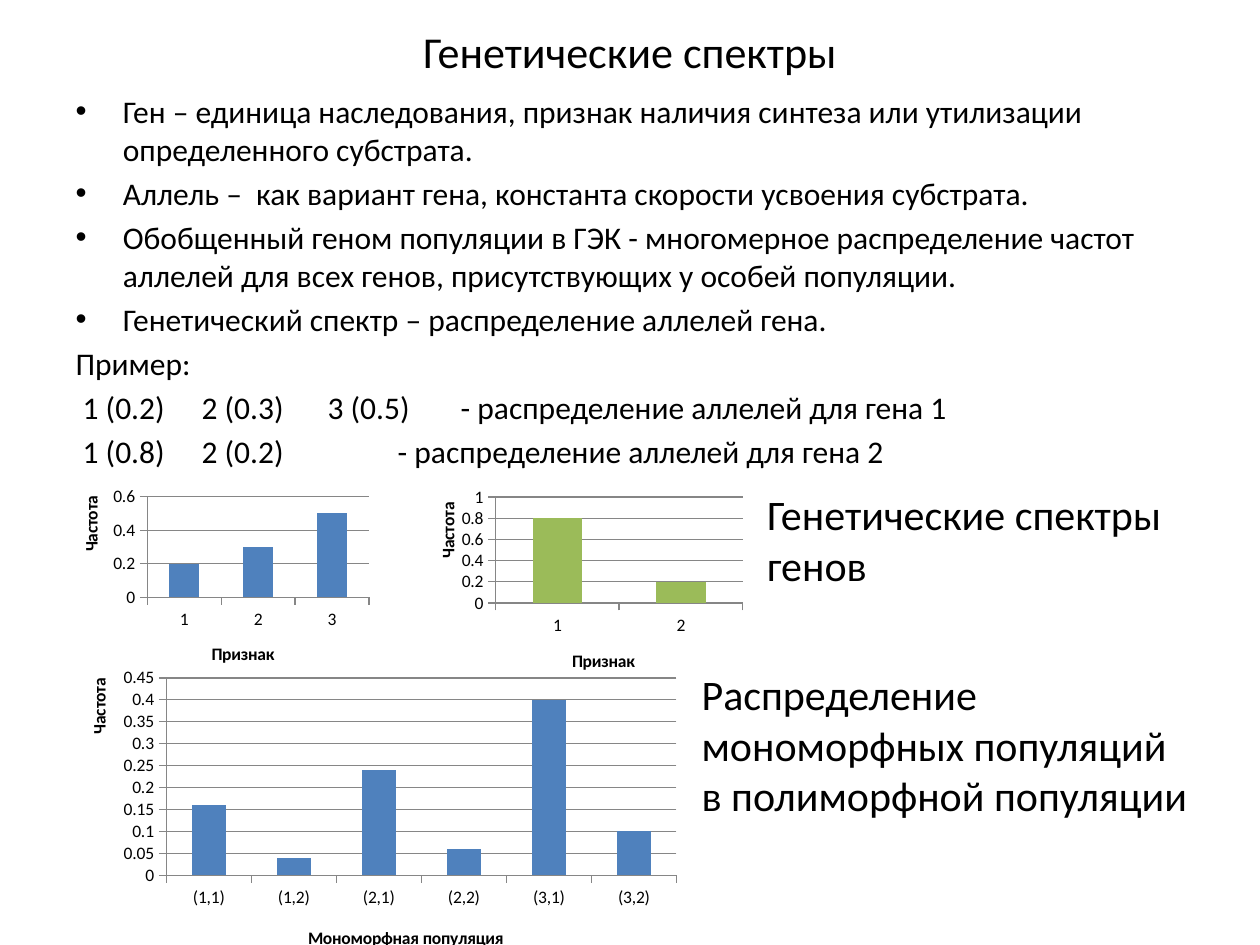
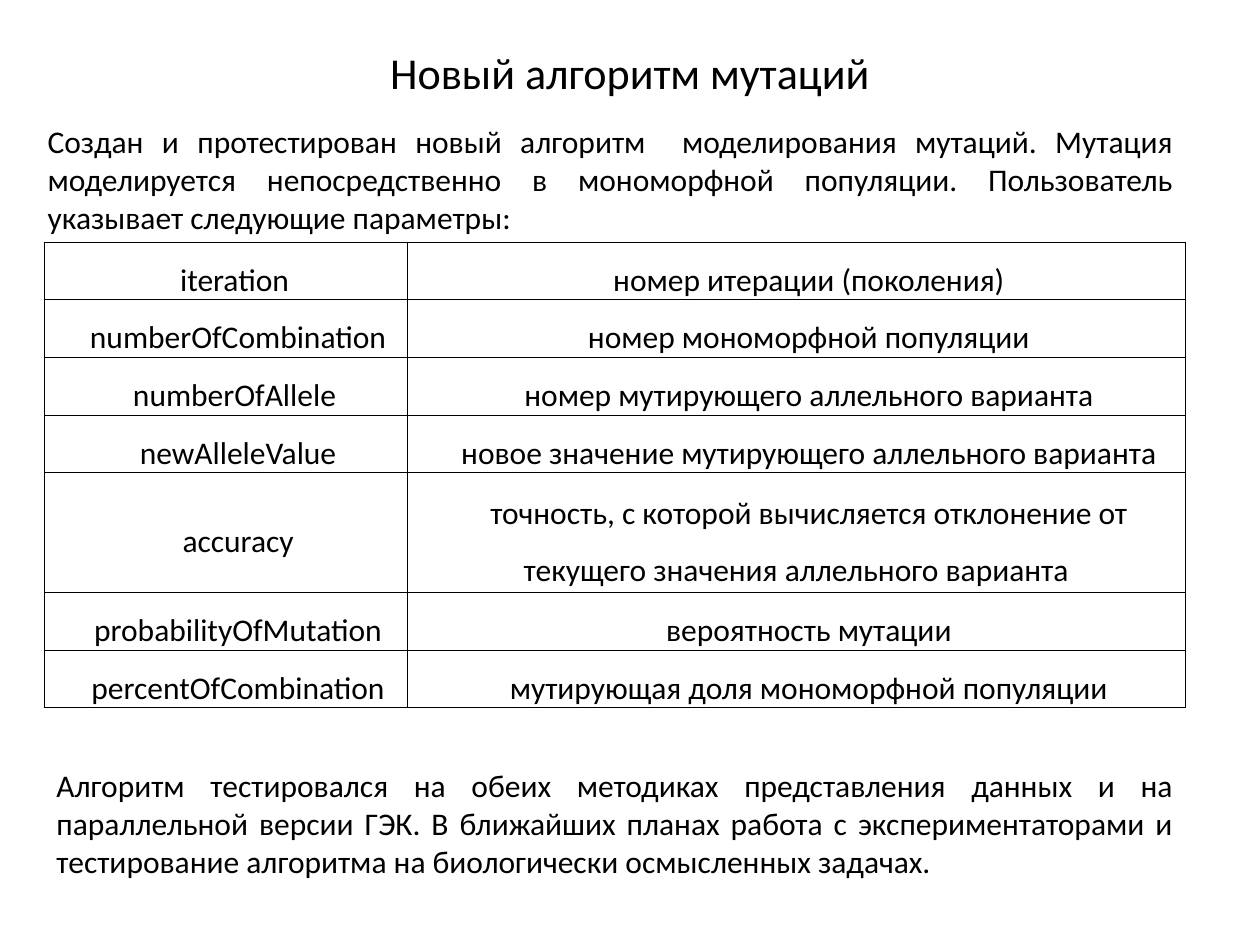
from pptx import Presentation
from pptx.chart.data import CategoryChartData
from pptx.dml.color import RGBColor
from pptx.enum.chart import XL_CHART_TYPE, XL_TICK_MARK
from pptx.enum.text import MSO_ANCHOR, MSO_AUTO_SIZE, PP_ALIGN
from pptx.oxml import parse_xml
from pptx.oxml.ns import nsdecls, qn
from pptx.util import Inches, Pt

# Shared look
FONT = "Calibri"
BLACK, GREY, BLUE, GREEN = "000000", "868686", "4F81BD", "9BBB59"
LEFT, MID, JUST = PP_ALIGN.LEFT, PP_ALIGN.CENTER, PP_ALIGN.JUSTIFY

# Slide 1 wording
TERMS = [
    "Ген – единица наследования, признак наличия синтеза или утилизации определенного субстрата.",
    "Аллель –  как вариант гена, константа скорости усвоения субстрата.",
    "Обобщенный геном популяции в ГЭК - многомерное распределение частот аллелей "
    "для всех генов, присутствующих у особей популяции.",
    "Генетический спектр – распределение аллелей гена.",
]
SAMPLE = [
    "Пример:",
    " 1 (0.2)\t2 (0.3)\t3 (0.5)\t - распределение аллелей для гена 1",
    " 1 (0.8)\t2 (0.2)\t\t - распределение аллелей для гена 2",
]

# Slide 2 wording
INTRO = ("Создан и протестирован новый алгоритм  моделирования мутаций. Мутация "
         "моделируется непосредственно в мономорфной популяции. Пользователь "
         "указывает следующие параметры: ")
PLANS = ("Алгоритм тестировался на обеих методиках представления данных и на "
         "параллельной версии ГЭК. В ближайших планах работа с экспериментаторами "
         "и тестирование алгоритма на биологически осмысленных задачах.")
PARAMS = [
    ("iteration ", "номер итерации (поколения)"),
    ("numberOfCombination", "номер мономорфной популяции"),
    ("numberOfAllele ", "номер мутирующего аллельного варианта"),
    ("newAlleleValue", "новое значение мутирующего аллельного варианта"),
    ("accuracy", "точность, с которой вычисляется отклонение от текущего значения "
                 "аллельного варианта"),
    ("probabilityOfMutation", "вероятность мутации"),
    ("percentOfCombination", "мутирующая доля мономорфной популяции"),
]


def color(code):
    return RGBColor.from_string(code)


def style(font, size, bold=False):
    font.name, font.size, font.bold = FONT, Pt(size), bold
    font.color.rgb = color(BLACK)


def write(frame, *lines, size=18, align=LEFT, space=None, indent=None):
    """Fill a text frame, one paragraph for each line."""
    for i, line in enumerate(lines):
        para = frame.add_paragraph() if i else frame.paragraphs[0]
        para.alignment = align
        if space:
            para.line_spacing = space
        if indent is not None:
            props = para._p.get_or_add_pPr()
            props.set("marL", "0")
            props.set("indent", str(Inches(indent)))
        run = para.add_run()
        run.text = line
        style(run.font, size)


def place(shape, box):
    shape.left, shape.top, shape.width, shape.height = map(Inches, box)
    shape.text_frame.auto_size = MSO_AUTO_SIZE.NONE


def add_title(slide, text, top):
    title = slide.shapes.title
    place(title, (0.5, top, 9, 0.54))
    write(title.text_frame, text, size=25.2, align=MID)


def add_list(slide, box):
    body = slide.placeholders[1]
    place(body, box)
    write(body.text_frame, *TERMS, *SAMPLE)
    # The sample lines have no bullet and share three tab stops
    for para in body.text_frame.paragraphs[len(TERMS):]:
        props = para._p.get_or_add_pPr()
        props.set("marL", "0")
        props.set("indent", "0")
        stops = "".join(f'<a:tab pos="{Inches(n)}" algn="l"/>' for n in (1, 2, 3))
        props.append(parse_xml(f'<a:buNone {nsdecls("a")}/>'))
        props.append(parse_xml(f'<a:tabLst {nsdecls("a")}>{stops}</a:tabLst>'))


def add_note(slide, box, *lines, wrap=True, **look):
    frame = slide.shapes.add_textbox(*map(Inches, box)).text_frame
    frame.word_wrap = wrap
    write(frame, *lines, **look)


def layout(parent, spot, after=None):
    """Fix a chart part at fractions of the chart's size."""
    for old in parent.findall(qn("c:layout")):
        parent.remove(old)
    inner = '<c:layoutTarget val="inner"/>' if len(spot) == 4 else ""
    sides = "".join(f'<c:{k} val="{v}"/>' for k, v in zip("xywh", spot))
    item = parse_xml(
        f'<c:layout {nsdecls("c")}><c:manualLayout>{inner}<c:xMode val="edge"/>'
        f'<c:yMode val="edge"/>{sides}</c:manualLayout></c:layout>')
    if after is None:
        parent.insert(0, item)
    else:
        after.addnext(item)


def set_axis(axis, text, spot, turn=0):
    axis.major_tick_mark = XL_TICK_MARK.OUTSIDE
    axis.minor_tick_mark = XL_TICK_MARK.NONE
    axis.format.line.color.rgb = color(GREY)
    style(axis.tick_labels.font, 10)
    frame = axis.axis_title.text_frame
    frame.text = text
    style(frame.paragraphs[0].runs[0].font, 10, bold=True)
    frame._txBody.bodyPr.set("rot", str(turn * 60000))
    frame._txBody.bodyPr.set("vert", "horz")
    title = axis.axis_title._element
    layout(title, spot, title.find(qn("c:tx")))


def add_bars(slide, box, cats, vals, label, top, step, plot, low, side, fill=BLUE):
    data = CategoryChartData()
    data.categories = cats
    data.add_series("Series 1", vals)
    chart = slide.shapes.add_chart(
        XL_CHART_TYPE.COLUMN_CLUSTERED, *map(Inches, box), data).chart
    chart.has_legend = chart.has_title = False
    style(chart.font, 10)
    bars = chart.plots[0]
    bars.gap_width, bars.vary_by_categories = 150, False
    paint = bars.series[0].format.fill
    paint.solid()
    paint.fore_color.rgb = color(fill)
    set_axis(chart.category_axis, label, low)
    axis = chart.value_axis
    set_axis(axis, "Частота", side, turn=-90)
    axis.minimum_scale, axis.maximum_scale, axis.major_unit = 0, top, step
    axis.tick_labels.number_format = "General"
    axis.tick_labels.number_format_is_linked = False
    axis.has_major_gridlines = True
    axis.major_gridlines.format.line.color.rgb = color(GREY)
    layout(chart._chartSpace.chart.plotArea, plot)


def add_border(cell):
    props = cell._tc.get_or_add_tcPr()
    for side in "LRTB":
        props.append(parse_xml(
            f'<a:ln{side} {nsdecls("a")} w="{Pt(0.5)}"><a:solidFill>'
            f'<a:srgbClr val="{BLACK}"/></a:solidFill></a:ln{side}>'))


def add_grid(slide, box, rows, widths, heights):
    table = slide.shapes.add_table(len(rows), len(widths), *map(Inches, box)).table
    table.first_row = table.horz_banding = False
    for col, width in zip(table.columns, widths):
        col.width = Inches(width)
    for row, height, texts in zip(table.rows, heights, rows):
        row.height = Inches(height)
        for cell, text in zip(row.cells, texts):
            cell.vertical_anchor = MSO_ANCHOR.MIDDLE
            cell.margin_left = cell.margin_right = Inches(0.07)
            cell.margin_top = cell.margin_bottom = 0
            add_border(cell)
            cell.fill.background()
            write(cell.text_frame, text, align=MID, space=1.5, indent=0.2)


def show_genes(deck):
    slide = deck.slides.add_slide(deck.slide_layouts[1])
    add_title(slide, "Генетические спектры", 0.13)
    add_list(slide, (0.5, 0.68, 9, 6.02))
    # Spectra of the two genes
    add_bars(slide, (0.43, 3.83, 2.55, 1.6), ["1", "2", "3"], [0.2, 0.3, 0.5],
             "Признак", 0.6, 0.2, plot=(0.29, 0.07, 0.69, 0.5),
             low=(0.48, 0.78), side=(0.07, 0.05))
    add_bars(slide, (3.19, 3.83, 2.76, 1.65), ["1", "2"], [0.8, 0.2],
             "Признак", 1, 0.2, plot=(0.27, 0.07, 0.71, 0.51),
             low=(0.48, 0.79), side=(0.09, 0.08), fill=GREEN)
    # Mixed population
    pairs = [f"({a},{b})" for a in (1, 2, 3) for b in (1, 2)]
    add_bars(slide, (0.47, 5.26, 5, 2.41), pairs, [0.16, 0.04, 0.24, 0.06, 0.4, 0.1],
             "Мономорфная популяция", 0.45, 0.05, plot=(0.17, 0.05, 0.81, 0.65),
             low=(0.39, 0.86), side=(0.04, 0.04))
    add_note(slide, (5.99, 3.83, 3.36, 0.91), "Генетические спектры", "генов",
             size=24, wrap=False)
    add_note(slide, (5.47, 5.26, 4.4, 1.31), "Распределение мономорфных популяций",
             "в полиморфной популяции", size=24, align=JUST)


def show_rules(deck):
    slide = deck.slides.add_slide(deck.slide_layouts[5])
    add_title(slide, "Новый алгоритм мутаций", 0.3)
    heights = [0.95 if name == "accuracy" else 0.45 for name, _ in PARAMS]
    add_grid(slide, (0.35, 1.92, 9.06, 3.66), PARAMS, (2.88, 6.18), heights)
    add_note(slide, (0.28, 0.92, 9.13, 1.01), INTRO, align=JUST)
    add_note(slide, (0.35, 6.03, 9.06, 1.01), PLANS, align=JUST)


def main():
    deck = Presentation()
    deck.slide_width, deck.slide_height = Inches(10), Inches(7.5)
    show_genes(deck)
    show_rules(deck)
    deck.save("out.pptx")


if __name__ == "__main__":
    main()
